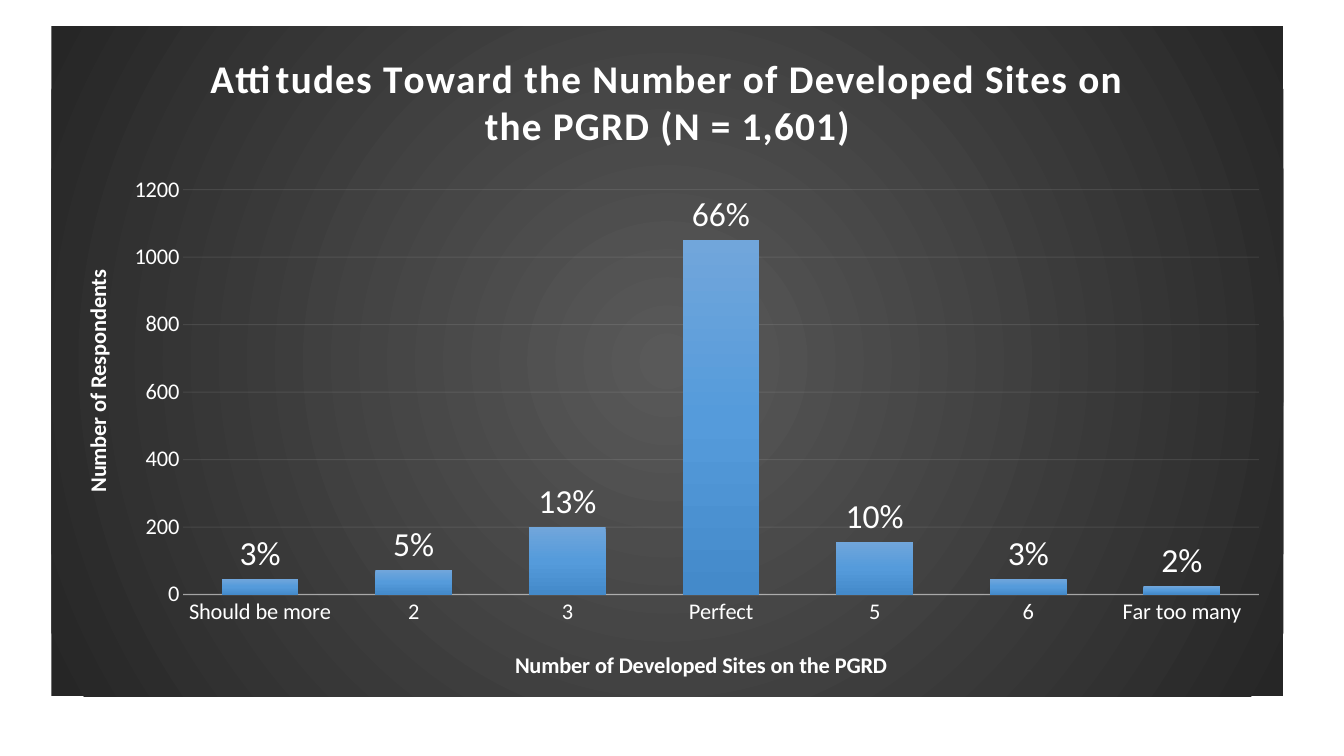
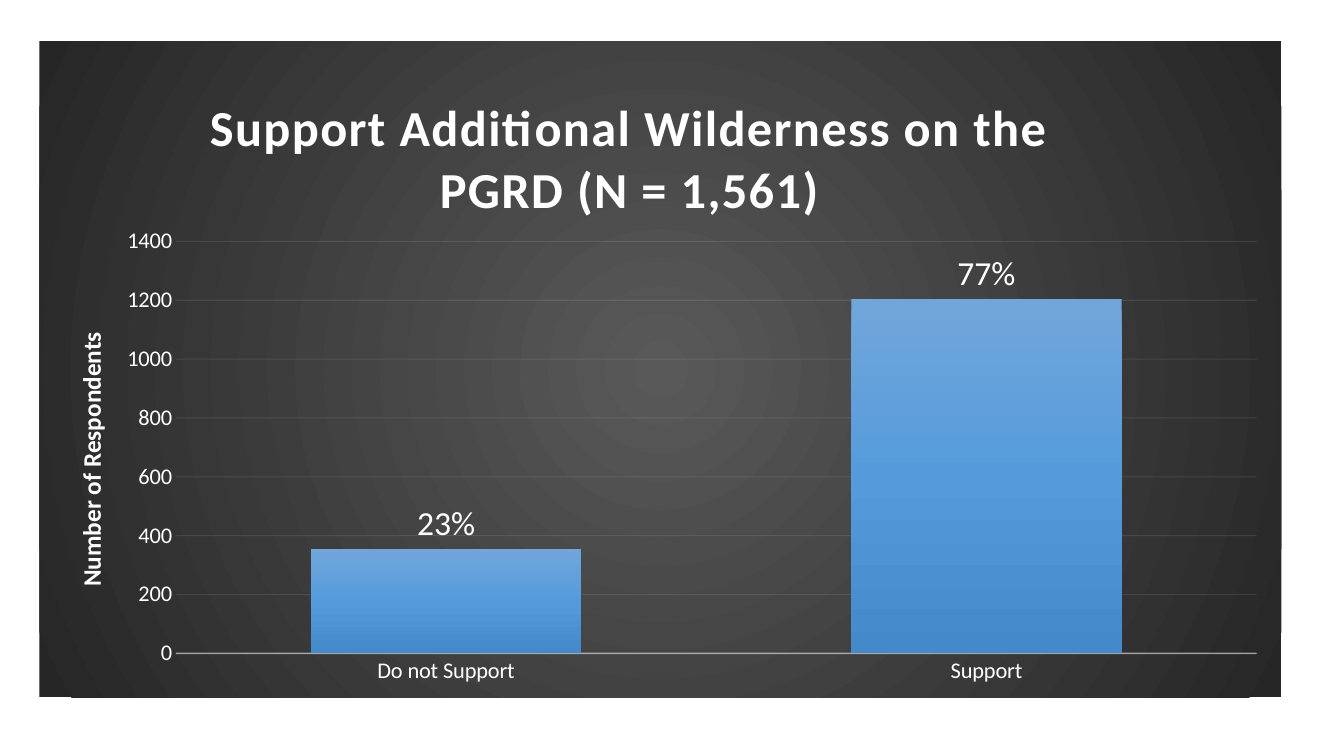
import pptx
import pptx.util
import pptx.chart.data
import pptx.dml.color
import pptx.enum.chart
import pptx.oxml
import pptx.oxml.ns

PIXEL = 9144
FONT = "Calibri"
WHITE = "FFFFFF"
LINE = "F2F2F2"
BACKDROP = [(0, "595959"), (100, "262626")]
BARS = [(0, "71A6DB"), (50, "559BDB"), (100, "448ACA")]
RADIAL = '<a:path path="circle"><a:fillToRect l="50000" t="50000" r="50000" b="50000"/></a:path>'
DOWNWARD = '<a:lin ang="5400000" scaled="0"/>'


def px(length):
    return pptx.util.Emu(length * PIXEL)


def color(value):
    return pptx.dml.color.RGBColor.from_string(value)


def element(xml):
    names = pptx.oxml.ns.nsdecls("a", "c")
    return pptx.oxml.parse_xml(xml.replace(">", f" {names}>", 1))


def gradient(stops, direction):
    marks = "".join(
        f'<a:gs pos="{position * 1000}"><a:srgbClr val="{value}"/></a:gs>'
        for position, value in stops
    )
    return element(f"<a:gradFill><a:gsLst>{marks}</a:gsLst>{direction}</a:gradFill>")


class Deck:
    """Holds the dark chart style and the slide being built."""

    def __init__(self):
        self.presentation = pptx.Presentation()
        self.presentation.slide_width = px(1333)
        self.presentation.slide_height = px(750)
        self.slide = None
        self.chart = None

    def add_slide(self):
        self.slide = self.presentation.slides.add_slide(self.presentation.slide_layouts[6])

    def style(self, font, size, bold=False):
        font.name = FONT
        font.size = pptx.util.Pt(size)
        font.bold = bold
        font.color.rgb = color(WHITE)

    def find(self, query):
        return self.chart.element.xpath(query)[0]

    def place(self, query, x, y, width=None, height=None):
        parent = self.find(query)
        for old in parent.xpath("c:layout"):
            parent.remove(old)
        inner = '<c:layoutTarget val="inner"/>' if width else ""
        sizes = f'<c:w val="{width}"/><c:h val="{height}"/>' if width else ""
        layout = element(
            f'<c:layout><c:manualLayout>{inner}<c:xMode val="edge"/><c:yMode val="edge"/>'
            f'<c:x val="{x}"/><c:y val="{y}"/>{sizes}</c:manualLayout></c:layout>'
        )
        parent.insert(len(parent.xpath("c:tx")), layout)

    def add_title(self, owner, query, text, size, corner=None):
        owner.has_title = True
        title = owner.chart_title if owner is self.chart else owner.axis_title
        title.text_frame.text = text
        self.style(title.text_frame.paragraphs[0].font, size, True)
        if corner:
            self.place(query, *corner)

    def style_line(self, line, query, width, opacity):
        line.color.rgb = color(LINE)
        line.width = pptx.util.Pt(width)
        self.find(f"{query}/c:spPr//a:srgbClr").append(
            element(f'<a:alpha val="{opacity * 1000}"></a:alpha>')
        )

    def style_axes(self, maximum):
        categories, values = self.chart.category_axis, self.chart.value_axis
        for axis in (categories, values):
            axis.major_tick_mark = axis.minor_tick_mark = pptx.enum.chart.XL_TICK_MARK.NONE
            self.style(axis.tick_labels.font, 16)
        self.style_line(categories.format.line, "//c:catAx", 1, 54)
        values.format.line.fill.background()
        values.minimum_scale, values.maximum_scale, values.major_unit = 0, maximum, 200
        values.has_major_gridlines = True
        self.style_line(values.major_gridlines.format.line, "//c:valAx/c:majorGridlines", 0.75, 10)

    def add_percentages(self, series):
        position = pptx.enum.chart.XL_LABEL_POSITION.OUTSIDE_END
        labels = series.data_labels
        labels.show_value = True
        labels.position = position
        self.style(labels.font, 24)
        total = sum(series.values)
        for index, value in enumerate(series.values):
            label = series.points[index].data_label
            run = label.text_frame.paragraphs[0].add_run()
            run.text = f"{value / total:.0%}"
            self.style(run.font, 24)
            label.position = position

    def add_column_chart(self, box, counts, maximum, plot):
        data = pptx.chart.data.CategoryChartData()
        data.categories = list(counts)
        data.add_series("Series 1", list(counts.values()))
        kind = pptx.enum.chart.XL_CHART_TYPE.COLUMN_CLUSTERED
        self.chart = self.slide.shapes.add_chart(kind, *map(px, box), data).chart
        self.chart.has_legend = False
        self.chart.font.name = FONT
        self.chart.font.size = pptx.util.Pt(10)
        backdrop = element("<c:spPr><a:ln><a:noFill/></a:ln></c:spPr>")
        backdrop.insert(0, gradient(BACKDROP, RADIAL))
        self.find("c:chart").addnext(backdrop)
        columns = self.chart.plots[0]
        columns.gap_width, columns.overlap, columns.vary_by_categories = 100, -24, False
        series = columns.series[0]
        series.format.fill.solid()
        fill = self.find("//c:ser/c:spPr/a:solidFill")
        fill.getparent().replace(fill, gradient(BARS, DOWNWARD))
        self.add_percentages(series)
        self.style_axes(maximum)
        self.place("//c:plotArea", *plot)

    def add_heading(self, text, size, corner=None):
        self.add_title(self.chart, "c:chart/c:title", text, size, corner)
        self.find("c:chart/c:title//a:defRPr").set("spc", "100")

    def add_category_title(self, text, size, corner):
        self.add_title(self.chart.category_axis, "//c:catAx/c:title", text, size, corner)

    def add_value_title(self, size, corner):
        self.add_title(
            self.chart.value_axis, "//c:valAx/c:title", "Number of Respondents", size, corner
        )
        body = self.find("//c:valAx/c:title//a:bodyPr")
        body.set("rot", "-5400000")
        body.set("vert", "horz")


def main():
    deck = Deck()

    deck.add_slide()
    attitudes = {
        "Should be more": 47,
        "2": 73,
        "3": 201,
        "Perfect": 1051,
        "5": 157,
        "6": 47,
        "Far too many": 25,
    }
    deck.add_column_chart((51, 26, 1222, 665), attitudes, 1200, (0.107, 0.244, 0.873, 0.604))
    deck.add_heading("Attitudes Toward the Number of Developed Sites on the PGRD (N = 1,601)", 28)
    deck.add_category_title("Number of Developed Sites on the PGRD", 16, (0.373, 0.925))
    deck.add_value_title(16, (0.022, 0.357))

    deck.add_slide()
    support = {"Do not Support": 356, "Support": 1205}
    deck.add_column_chart((39, 41, 1232, 651), support, 1400, (0.11, 0.305, 0.87, 0.628))
    deck.add_heading("Support Additional Wilderness on the PGRD (N = 1,561)", 36, (0.13, 0.064))
    deck.add_value_title(18, (0.024, 0.436))

    deck.presentation.save("out.pptx")


if __name__ == "__main__":
    main()
